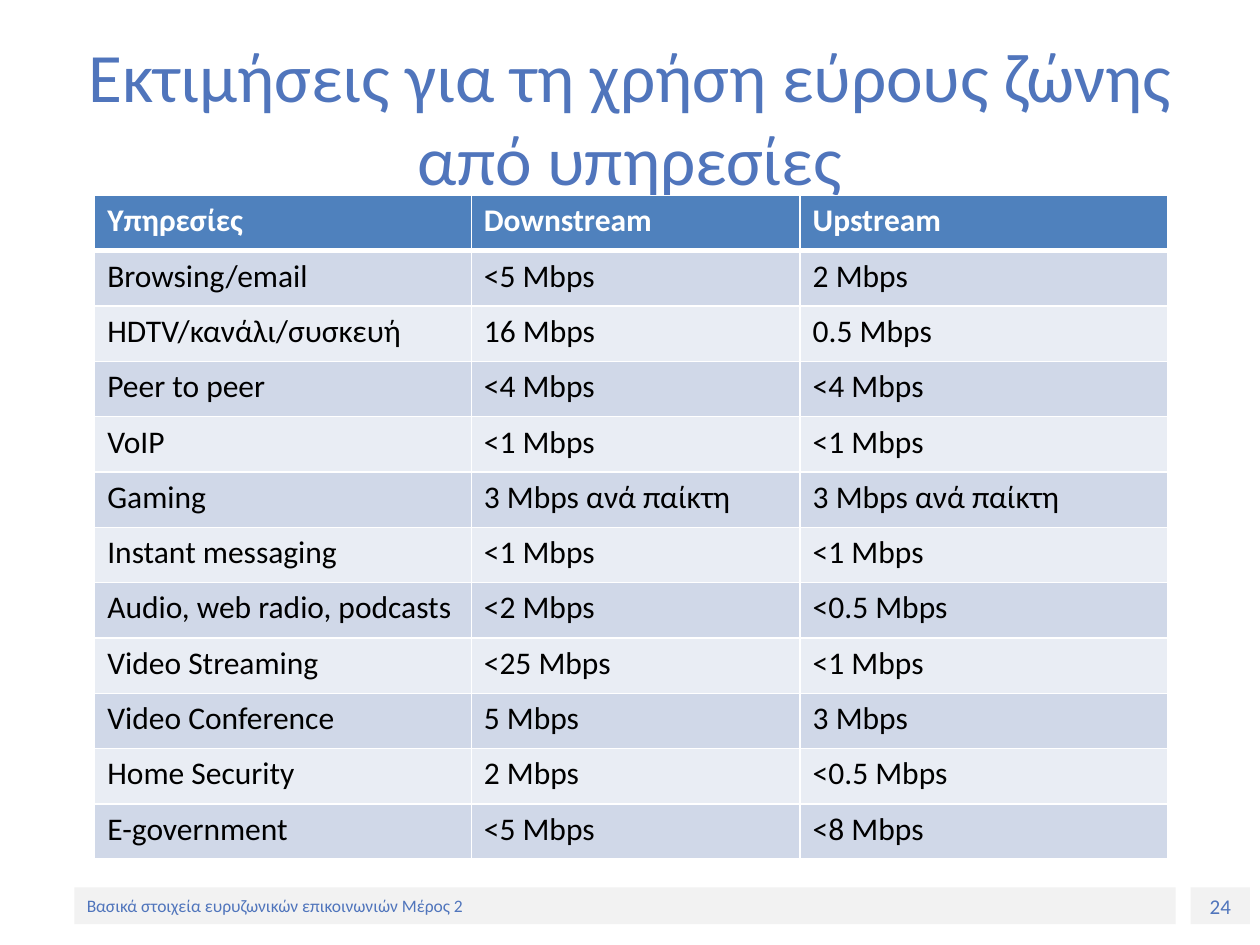
"""Builds a slide with a table of bandwidth estimates per service."""
from dataclasses import dataclass

from lxml import etree
from pptx import Presentation
from pptx import util as u
from pptx.dml.color import RGBColor
from pptx.enum import shapes, text
from pptx.oxml.ns import qn


@dataclass(frozen=True)
class Theme:
    font: str = "Calibri"
    accent: str = "5075BC"
    header: str = "4F81BD"
    bands: tuple = ("D0D8E8", "E9EDF4")
    footer: str = "F2F2F2"
    light: str = "FFFFFF"
    dark: str = "000000"
    title_size: float = 39.6
    table_size: int = 18
    number_size: int = 12
    footer_size: int = 10


THEME = Theme()
COLUMN_WIDTHS = (7.59, 6.63, 7.42)
ROWS = (
    ("Υπηρεσίες", "Downstream", "Upstream"),
    ("Browsing/email", "<5 Mbps", "2 Mbps"),
    ("HDTV/κανάλι/συσκευή", "16 Mbps", "0.5 Mbps"),
    ("Peer to peer", "<4 Mbps", "<4 Mbps"),
    ("VoIP", "<1 Mbps", "<1 Mbps"),
    ("Gaming", "3 Mbps ανά παίκτη", "3 Mbps ανά παίκτη"),
    ("Instant messaging", "<1 Mbps", "<1 Mbps"),
    ("Audio, web radio, podcasts", "<2 Mbps", "<0.5 Mbps"),
    ("Video Streaming", "<25 Mbps", "<1 Mbps"),
    ("Video Conference", "5 Mbps", "3 Mbps"),
    ("Home Security", "2 Mbps", "<0.5 Mbps"),
    ("E-government", "<5 Mbps", "<8 Mbps"),
)


def write(text_frame, content, size, color, bold=False, align=text.PP_ALIGN.LEFT):
    text_frame.text = content
    paragraph = text_frame.paragraphs[0]
    paragraph.alignment = align
    for run in paragraph.runs:
        run.font.name = THEME.font
        run.font.size = u.Pt(size)
        run.font.bold = bold
        run.font.color.rgb = RGBColor.from_string(color)


def place_title(slide, content, left, top, width, height):
    title = slide.shapes.title
    title.left, title.top = u.Cm(left), u.Cm(top)
    title.width, title.height = u.Cm(width), u.Cm(height)
    title.text_frame.auto_size = text.MSO_AUTO_SIZE.NONE
    title.text_frame.vertical_anchor = text.MSO_ANCHOR.MIDDLE
    write(title.text_frame, content, THEME.title_size, THEME.accent,
          align=text.PP_ALIGN.CENTER)


def add_footer_box(slide, content, left, width, size, align):
    shape = slide.shapes.add_shape(shapes.MSO_SHAPE.RECTANGLE, u.Cm(left),
                                   u.Cm(17.89), u.Cm(width), u.Cm(0.74))
    shape.shadow.inherit = False
    shape.fill.solid()
    shape.fill.fore_color.rgb = RGBColor.from_string(THEME.footer)
    shape.line.fill.background()
    shape.text_frame.word_wrap = True
    shape.text_frame.vertical_anchor = text.MSO_ANCHOR.MIDDLE
    write(shape.text_frame, content, size, THEME.accent, align=align)


def set_borders(cell, **widths):
    properties = cell._tc.get_or_add_tcPr()
    for side in "LRTB":
        line = etree.SubElement(properties, qn(f"a:ln{side}"),
                                w=str(u.Pt(widths.get(side, 1))))
        fill = etree.SubElement(line, qn("a:solidFill"))
        etree.SubElement(fill, qn("a:srgbClr"), val=THEME.light)


def format_cell(cell, content, row):
    is_header = row == 0
    set_borders(cell, T=3 if row == 1 else 1, B=3 if is_header else 1)
    color = THEME.header if is_header else THEME.bands[(row - 1) % 2]
    cell.fill.solid()
    cell.fill.fore_color.rgb = RGBColor.from_string(color)
    write(cell.text_frame, content, THEME.table_size,
          THEME.light if is_header else THEME.dark, bold=is_header)


def add_service_table(slide, left, top, height):
    table = slide.shapes.add_table(len(ROWS), len(COLUMN_WIDTHS), u.Cm(left), u.Cm(top),
                                   u.Cm(sum(COLUMN_WIDTHS)), u.Cm(height)).table
    for column, width in zip(table.columns, COLUMN_WIDTHS):
        column.width = u.Cm(width)
    for row, contents in enumerate(ROWS):
        for column, content in enumerate(contents):
            format_cell(table.cell(row, column), content, row)


def main():
    presentation = Presentation()
    presentation.slide_width, presentation.slide_height = u.Cm(25.4), u.Cm(19.05)
    slide = presentation.slides.add_slide(presentation.slide_layouts[5])
    add_footer_box(slide, "24", 24, 1.2, THEME.number_size, text.PP_ALIGN.CENTER)
    add_footer_box(slide, "Βασικά στοιχεία ευρυζωνικών επικοινωνιών Μέρος 2",
                   1.5, 22.2, THEME.footer_size, text.PP_ALIGN.LEFT)
    place_title(slide, "Εκτιμήσεις για τη χρήση εύρους ζώνης από υπηρεσίες",
                1.27, 0.76, 22.86, 3.18)
    add_service_table(slide, 1.91, 3.94, 13.39)
    presentation.save("out.pptx")


if __name__ == "__main__":
    main()
